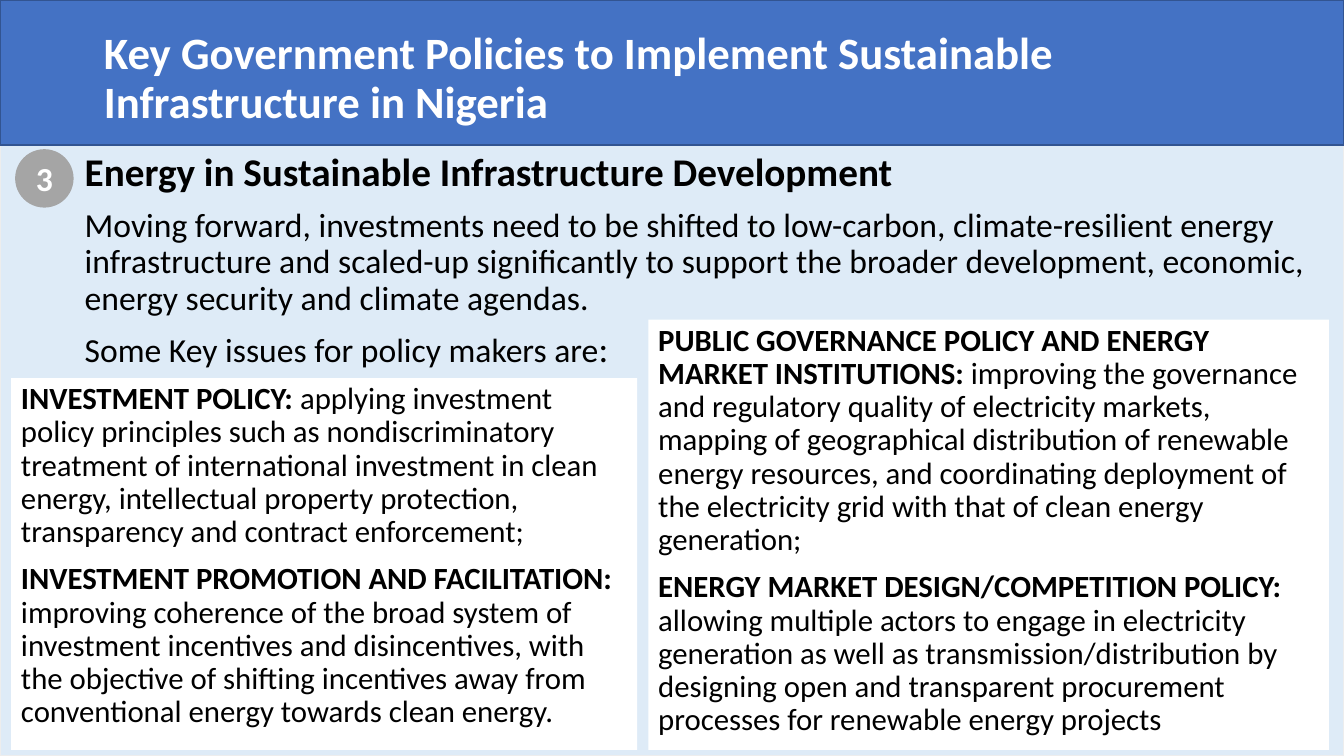
"""Build the slide on energy policies for sustainable infrastructure in Nigeria."""
from dataclasses import dataclass

from pptx import Presentation
from pptx.dml.color import RGBColor
from pptx.enum.shapes import MSO_SHAPE
from pptx.enum.text import MSO_ANCHOR, MSO_AUTO_SIZE, PP_ALIGN
from pptx.oxml.ns import qn
from pptx.shapes.autoshape import Shape
from pptx.text.text import TextFrame
from pptx.util import Pt

RECT, OVAL = MSO_SHAPE.RECTANGLE, MSO_SHAPE.OVAL
TOP, MIDDLE = MSO_ANCHOR.TOP, MSO_ANCHOR.MIDDLE
LEFT, CENTER = PP_ALIGN.LEFT, PP_ALIGN.CENTER
NO_FIT = MSO_AUTO_SIZE.NONE
SCALE = 9144
BLACK, WHITE = "000000", "FFFFFF"
FLOW = {"line_spacing": 0.9, "space_before": Pt(10), "alignment": LEFT}
BADGE = {"alignment": CENTER}


@dataclass(frozen=True)
class Box:
    left: int
    top: int
    width: int
    height: int


@dataclass(frozen=True)
class Run:
    text: str
    size: int
    bold: bool = False
    color: str = BLACK


@dataclass(frozen=True)
class Panel:
    box: Box
    fill: str
    line: str = ""
    kind: MSO_SHAPE = RECT


Paras = list[list[Run]]


def paint(code: str) -> RGBColor:
    return RGBColor.from_string(code)


def place(shape: Shape, box: Box) -> None:
    for name in ("left", "top", "width", "height"):
        setattr(shape, name, getattr(box, name) * SCALE)


def write(frame: TextFrame, paras: Paras, style: dict,
          anchor: MSO_ANCHOR = TOP, right: int = 10) -> None:
    form = {"word_wrap": True, "auto_size": NO_FIT, "vertical_anchor": anchor,
            "margin_left": 10 * SCALE, "margin_right": right * SCALE,
            "margin_top": 5 * SCALE, "margin_bottom": 5 * SCALE}
    for name, value in form.items():
        setattr(frame, name, value)
    for index, runs in enumerate(paras):
        para = frame.add_paragraph() if index else frame.paragraphs[0]
        for name, value in style.items():
            setattr(para, name, value)
        props = para._p.get_or_add_pPr()
        props.set("marL", "0")
        props.set("indent", "0")
        props.append(props.makeelement(qn("a:buNone"), {}))
        for item in runs:
            run = para.add_run()
            run.text = item.text
            font = {"name": "Calibri", "size": Pt(item.size), "bold": item.bold}
            for name, value in font.items():
                setattr(run.font, name, value)
            run.font.color.rgb = paint(item.color)


def draw(panel: Panel) -> Shape:
    shape = slide.shapes.add_shape(panel.kind, 0, 0, 0, 0)
    place(shape, panel.box)
    shape.shadow.inherit = False
    shape.fill.solid()
    shape.fill.fore_color.rgb = paint(panel.fill)
    if panel.line:
        shape.line.color.rgb = paint(panel.line)
        shape.line.width = Pt(1)
    else:
        shape.line.fill.background()
    return shape


def policy(head: str, text: str) -> list[Run]:
    return [Run(f"{head}: ", 22, True), Run(text, 22)]


TITLE = [[Run("Key Government Policies to Implement Sustainable "
              "Infrastructure in Nigeria", 32, True, WHITE)]]
INTRO = [
    [Run("Energy in Sustainable Infrastructure Development", 28, True)],
    [Run("Moving forward, investments need to be shifted to low-carbon, "
         "climate-resilient energy infrastructure and scaled-up significantly "
         "to support the broader development, economic, energy security and "
         "climate agendas.", 24)],
    [Run("Some Key issues for policy makers are", 24), Run(":", 26)],
]
INVEST = [
    policy("INVESTMENT POLICY",
           "applying investment policy principles such as nondiscriminatory "
           "treatment of international investment in clean energy, "
           "intellectual property protection, transparency and contract "
           "enforcement;"),
    policy("INVESTMENT PROMOTION AND FACILITATION",
           "improving coherence of the broad system of investment incentives "
           "and disincentives, with the objective of shifting incentives away "
           "from conventional energy towards clean energy."),
]
MARKET = [
    policy("PUBLIC GOVERNANCE POLICY AND ENERGY MARKET INSTITUTIONS",
           "improving the governance and regulatory quality of electricity "
           "markets, mapping of geographical distribution of renewable energy "
           "resources, and coordinating deployment of the electricity grid "
           "with that of clean energy generation;"),
    policy("ENERGY MARKET DESIGN/COMPETITION POLICY",
           "allowing multiple actors to engage in electricity generation as "
           "well as transmission/distribution by designing open and "
           "transparent procurement processes for renewable energy projects"),
]

deck = Presentation()
deck.slide_width, deck.slide_height = 1333 * SCALE, 750 * SCALE
slide = deck.slides.add_slide(deck.slide_layouts[1])
title, body = slide.placeholders

draw(Panel(Box(0, 0, 1333, 750), "DEEBF7", "EDEDED"))
draw(Panel(Box(0, 0, 1333, 144), "4472C4", "325491"))
for holder, box, paras, right in (
    (body, Box(74, 146, 1243, 229), INTRO, 10),
    (title, Box(93, 26, 1224, 68), TITLE, 100),
):
    place(holder, box)
    write(holder.text_frame, paras, FLOW, right=right)
    slide.shapes._spTree.append(holder._element)

for box, paras in (
    (Box(11, 375, 621, 369), INVEST),
    (Box(643, 317, 675, 427), MARKET),
):
    write(draw(Panel(box, WHITE)).text_frame, paras, FLOW)
badge = draw(Panel(Box(15, 148, 58, 58), "A5A5A5", kind=OVAL))
write(badge.text_frame, [[Run("3", 24, True, WHITE)]], BADGE, MIDDLE)

deck.save("out.pptx")
